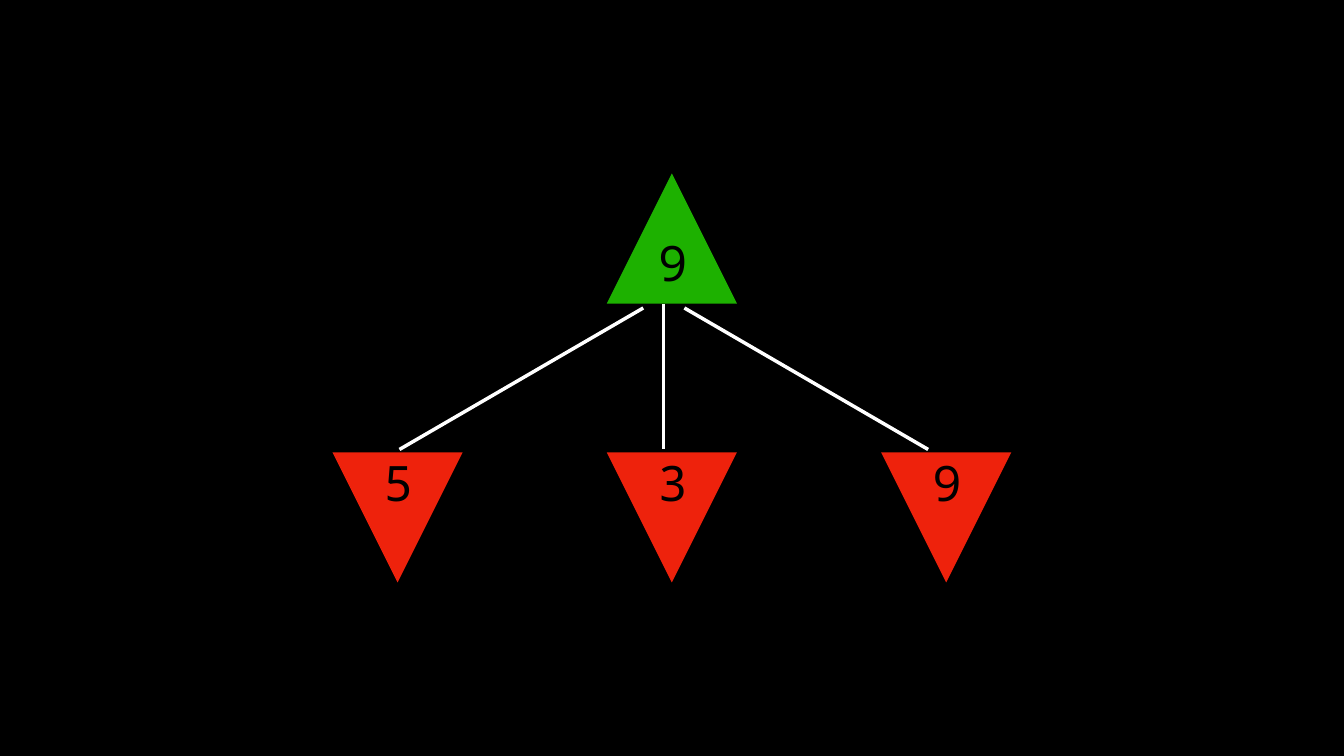
from pptx import Presentation
from pptx import util as u
from pptx.dml.color import RGBColor
from pptx.enum import shapes, text
from pptx.oxml.ns import qn
from lxml import etree

SIDE = 5.41
ROOT_TOP, CHILD_TOP = 7.21, 18.8
CENTER, STEP = 27.92, 11.4
MAX_NODE = dict(preset=shapes.MSO_SHAPE.ISOSCELES_TRIANGLE, color="1DB100", drop=2.42)
MIN_NODE = dict(preset=shapes.MSO_SHAPE.FLOWCHART_MERGE, color="EE220C", drop=-0.05)
EDGES = [(26.73, 12.8, 16.6, 18.68),
         (28.44, 12.8, 38.57, 18.68),
         (27.58, 12.65, 27.58, 18.67)]


def rgb(value):
    return RGBColor.from_string(value)


def set_all(obj, values):
    for name, value in values.items():
        setattr(obj, name, value)


def add_triangle(s, center, top, preset, color):
    sp = s.shapes.add_shape(preset, u.Cm(center - SIDE / 2), u.Cm(top),
                            u.Cm(SIDE), u.Cm(SIDE))
    sp.shadow.inherit = False
    sp.fill.solid()
    sp.fill.fore_color.rgb = rgb(color)
    sp.line.fill.background()


def add_value(s, value, center, top):
    sp = s.shapes.add_textbox(u.Cm(center - 0.6), u.Cm(top), u.Cm(1.2), u.Cm(2.51))
    tf = sp.text_frame
    set_all(tf, dict(margin_left=u.Cm(0.03), margin_right=0, margin_top=u.Cm(0.05),
                     margin_bottom=0, word_wrap=False,
                     vertical_anchor=text.MSO_ANCHOR.TOP))
    p = tf.paragraphs[0]
    p.alignment = text.PP_ALIGN.LEFT
    r = p.add_run()
    r.text = value
    set_all(r.font, dict(name="Noto Sans Mono", size=u.Pt(57.5)))
    r.font.color.rgb = rgb("000000")


def add_node(s, value, center, top, preset, color, drop):
    """Draw a triangle with its value placed `drop` below the triangle's top."""
    add_triangle(s, center, top, preset, color)
    add_value(s, value, center, top + drop)


def add_edge(s, *ends):
    cxn = s.shapes.add_connector(shapes.MSO_CONNECTOR.STRAIGHT, *map(u.Cm, ends))
    cxn.line.color.rgb = rgb("FFFFFF")
    cxn.line.width = u.Pt(4.12)
    etree.SubElement(cxn._element.spPr, qn("a:effectLst"))


def main():
    prs = Presentation()
    set_all(prs, dict(slide_width=u.Cm(55.85), slide_height=u.Cm(31.42)))
    s = prs.slides.add_slide(prs.slide_layouts[6])
    s.background.fill.solid()
    s.background.fill.fore_color.rgb = rgb("000000")

    add_node(s, "9", CENTER, ROOT_TOP, **MAX_NODE)
    for i, value in enumerate("539"):
        add_node(s, value, CENTER + (i - 1) * STEP, CHILD_TOP, **MIN_NODE)
    for edge in EDGES:
        add_edge(s, *edge)
    prs.save("out.pptx")


if __name__ == "__main__":
    main()
